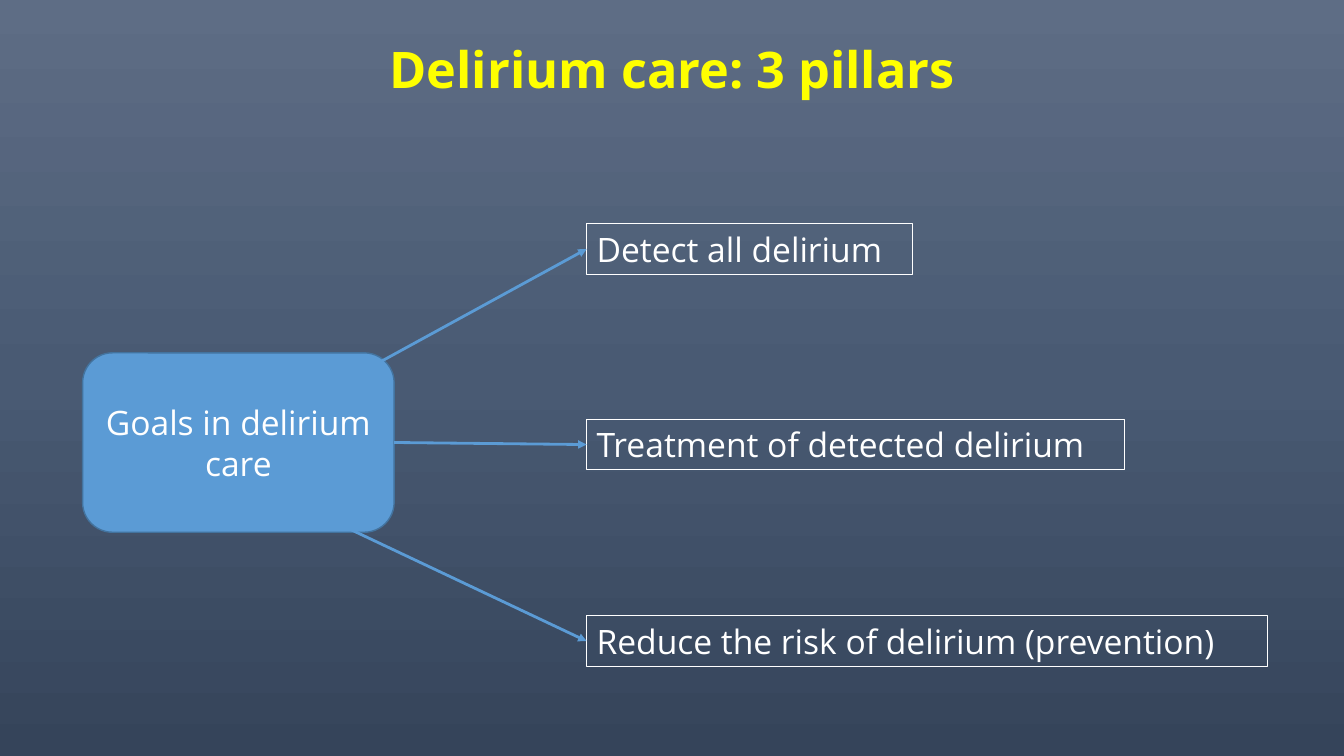
from copy import deepcopy

from lxml import etree
from pptx import Presentation
from pptx import util as u
from pptx.dml.color import RGBColor
from pptx.enum import shapes, text
from pptx.oxml.ns import qn

YELLOW = RGBColor(0xFF, 0xFF, 0x00)
WHITE = RGBColor(0xFF, 0xFF, 0xFF)
BLUE = RGBColor(0x5B, 0x9B, 0xD5)
DARK_BLUE = RGBColor(0x43, 0x73, 0x9E)
BACKGROUND = [RGBColor(0x5E, 0x6D, 0x85), RGBColor(0x49, 0x5A, 0x73), RGBColor(0x35, 0x44, 0x5A)]

presentation = Presentation()
presentation.slide_width = u.Inches(13.33)
presentation.slide_height = u.Inches(7.5)


def place(*shares):
    """Turn alternating percentages of slide width and height into lengths."""
    sides = (presentation.slide_width, presentation.slide_height) * 2
    return [u.Emu(round(side * share / 100)) for side, share in zip(sides, shares)]


def write(shape, words, size=24, color=WHITE, bold=False, align=text.PP_ALIGN.LEFT,
          anchor=text.MSO_ANCHOR.MIDDLE, wrap=True, spacing=1.0):
    frame = shape.text_frame
    frame.word_wrap = wrap
    frame.vertical_anchor = anchor
    paragraph = frame.paragraphs[0]
    paragraph.alignment = align
    paragraph.line_spacing = spacing
    run = paragraph.add_run()
    run.text = words
    run.font.name = "Open Sans"
    run.font.size = u.Pt(size)
    run.font.bold = bold
    run.font.color.rgb = color


slide = presentation.slides.add_slide(presentation.slide_layouts[5])

# Background: three evenly spaced stops, from top to bottom
fill = slide.background.fill
fill.gradient()
fill.gradient_angle = 270
stop_list = slide.background._cSld.find(".//" + qn("a:gsLst"))
stop_list.append(deepcopy(stop_list[-1]))
for index, (stop, color) in enumerate(zip(fill.gradient_stops, BACKGROUND)):
    stop.position = index / 2
    stop.color.rgb = color

title = slide.shapes.title
title.left, title.top, title.width, title.height = place(6.9, -0.13, 86.25, 19.33)
write(title, "Delirium care: 3 pillars", size=36, color=YELLOW, bold=True,
      align=text.PP_ALIGN.CENTER, spacing=0.9)

goals = slide.shapes.add_shape(shapes.MSO_SHAPE.ROUNDED_RECTANGLE,
                               *place(6.15, 46.67, 23.18, 23.73))
goals.shadow.inherit = False
goals.fill.solid()
goals.fill.fore_color.rgb = BLUE
goals.line.color.rgb = DARK_BLUE
goals.line.width = u.Pt(1)
write(goals, "Goals in delirium care", align=text.PP_ALIGN.CENTER)

# Each pillar: words, top, width, start of its arrow (None: right side of the goals)
pillars = [
    ("Detect all delirium", 29.6, 24.23, (22.95, 53.07)),
    ("Treatment of detected delirium", 55.47, 40.05, None),
    ("Reduce the risk of delirium (prevention)", 81.47, 50.63, (21.75, 66.4)),
]
for words, top, width, start in pillars:
    pillar = slide.shapes.add_textbox(*place(43.65, top, width, 6.67))
    pillar.line.color.rgb = WHITE
    pillar.line.width = u.Pt(0.75)
    write(pillar, words, anchor=text.MSO_ANCHOR.TOP, wrap=False)
    pillar.text_frame.auto_size = text.MSO_AUTO_SIZE.SHAPE_TO_FIT_TEXT

    arrow = slide.shapes.add_connector(shapes.MSO_CONNECTOR.STRAIGHT,
                                       *place(*(start or (0, 0)), 0, 0))
    if start is None:
        arrow.begin_connect(goals, 3)
    arrow.end_connect(pillar, 1)
    arrow.line.color.rgb = BLUE
    arrow.line.width = u.Pt(2)
    etree.SubElement(arrow.line._get_or_add_ln(), qn("a:tailEnd"), type="triangle")
    etree.SubElement(arrow._element.spPr, qn("a:effectLst"))

presentation.save("out.pptx")
